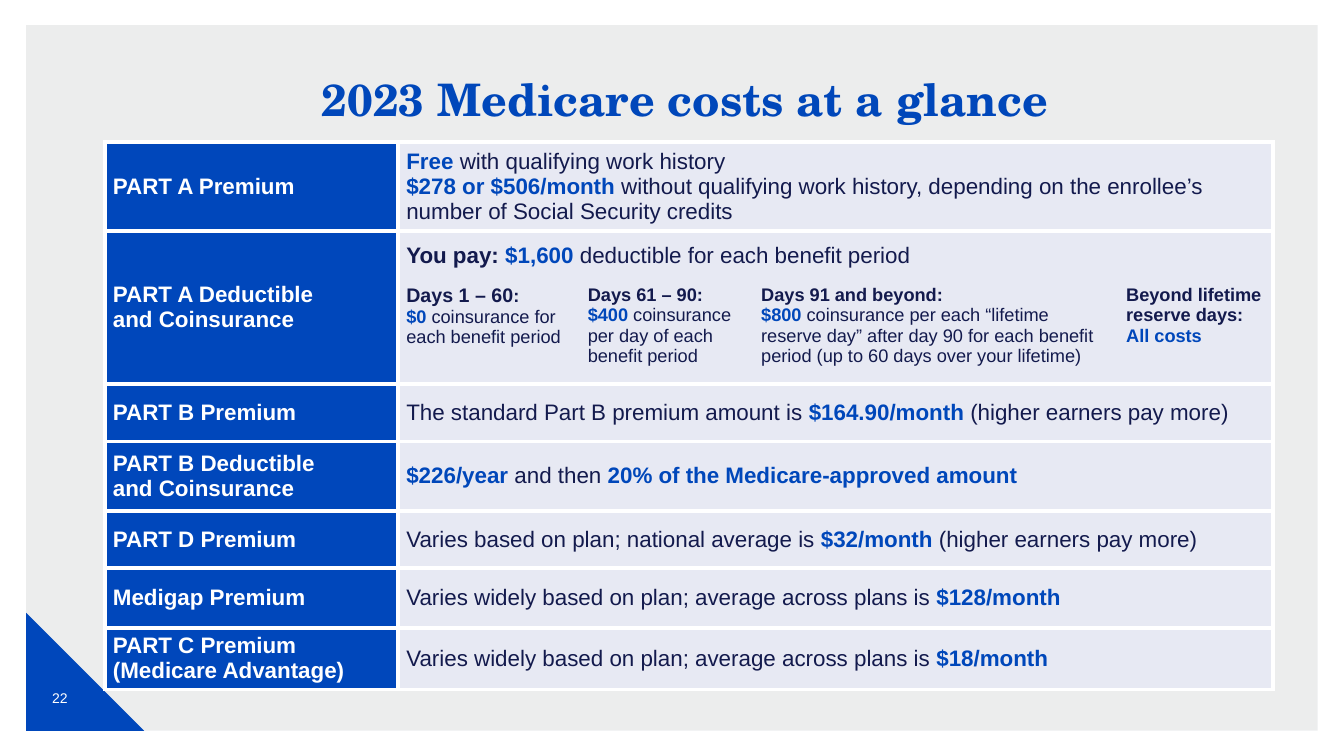
from dataclasses import dataclass

from lxml.etree import SubElement
from pptx import Presentation
from pptx.dml.color import RGBColor as Rgb
from pptx.enum.shapes import MSO_SHAPE as Shape
from pptx.enum.text import MSO_ANCHOR as Anchor, PP_ALIGN as Align
from pptx.oxml.ns import qn
from pptx.util import Inches, Pt


@dataclass(frozen=True)
class Theme:
    panel: str = "D0D3D4"
    blue: str = "0047BB"
    key: str = "0047BA"
    navy: str = "131A4D"
    pale: str = "E7E9F3"
    white: str = "FFFFFF"
    sans: str = "Arial"
    serif: str = "TeX Gyre Schola"
    title: int = 32
    main: int = 16
    lead: int = 14
    note: int = 13
    page: int = 10
    rule: int = 3


THEME = Theme()
TONES = {
    "head": (THEME.white, True),
    "key": (THEME.key, True),
    "bold": (THEME.navy, True),
    "body": (THEME.navy, False),
}
WIDTHS = [2.91, 1.8, 1.72, 3.62, 1.54]
HEIGHTS = [0.69, 0.5, 1.02, 0.57, 0.69, 0.57, 0.59, 0.57]
DAYS = 2

LABELS = {
    0: "PART A Premium",
    1: "PART A Deductible\nand Coinsurance",
    3: "PART B Premium",
    4: "PART B Deductible\nand Coinsurance",
    5: "PART D Premium",
    6: "Medigap Premium",
    7: "PART C Premium (Medicare Advantage)",
}
COSTS = {
    0: [("key", "Free "), ("body", "with qualifying work history\n"),
        ("key", "$278 or $506/month "),
        ("body", "without qualifying work history, depending on the "
                 "enrollee’s number of Social Security credits")],
    1: [("bold", "You pay: "), ("key", "$1,600 "),
        ("body", "deductible for each benefit period")],
    3: [("body", "The standard Part B premium amount is "),
        ("key", "$164.90/month "), ("body", "(higher earners pay more)")],
    4: [("key", "$226/year "), ("body", "and then "),
        ("key", "20% of the Medicare-approved amount")],
    5: [("body", "Varies based on plan; national average is "),
        ("key", "$32/month"), ("body", " (higher earners pay more)")],
    6: [("body", "Varies widely based on plan; average across plans is "),
        ("key", "$128/month")],
    7: [("body", "Varies widely based on plan; average across plans is "),
        ("key", "$18/month")],
}
STAYS = [
    [("bold", "Days 1 – 60", THEME.lead), ("bold", ":\n"), ("key", "$0"),
     ("body", " coinsurance for each benefit period")],
    [("bold", "Days 61 – 90:\n"), ("key", "$400"),
     ("body", " coinsurance\nper day of each benefit period")],
    [("bold", "Days 91 and beyond:\n"), ("key", "$800"),
     ("body", " coinsurance per each “lifetime reserve day” after day 90 "
              "for each benefit period (up to 60 days over your lifetime)")],
    [("bold", "Beyond lifetime reserve days:\n"), ("key", "All costs")],
]


def style(font, size, color, bold=False, name=THEME.sans):
    font.name = name
    font.size = Pt(size)
    font.bold = bold
    font.color.rgb = Rgb.from_string(color)


def write(cell, parts, size):
    para = cell.text_frame.paragraphs[0]
    for tone, text, *own in parts:
        for i, line in enumerate(text.split("\n")):
            if i:
                para.add_line_break()
            if line:
                run = para.add_run()
                run.text = line
                style(run.font, own[0] if own else size, *TONES[tone])


def edge(cell, sides):
    props = cell._tc.get_or_add_tcPr()
    for side in "LRTB":
        line = SubElement(props, qn("a:ln" + side), w=str(Pt(THEME.rule)))
        if side in sides:
            fill = SubElement(line, qn("a:solidFill"))
            SubElement(fill, qn("a:srgbClr"), val=THEME.white)
        else:
            SubElement(line, qn("a:noFill"))


def sides(row, col):
    if col and row == DAYS - 1:
        return "LTR"
    if col and row == DAYS:
        return {1: "LB", len(WIDTHS) - 1: "RB"}.get(col, "B")
    return "LRTB"


def block(slide, kind, box, color):
    shape = slide.shapes.add_shape(kind, *map(Inches, box))
    shape.shadow.inherit = False
    shape.fill.solid()
    shape.fill.fore_color.rgb = Rgb.from_string(color)
    shape.line.fill.background()
    return shape


def label(slide, box, text, pad, size, color, **look):
    frame = slide.shapes.add_textbox(*map(Inches, box)).text_frame
    frame.word_wrap = True
    frame.vertical_anchor = Anchor.MIDDLE
    frame.margin_left = frame.margin_right = Inches(pad)
    frame.text = text
    para = frame.paragraphs[0]
    para.alignment = Align.CENTER
    style(para.runs[0].font, size, color, **look)
    return para


def back(slide, box):
    left, top, wide, high = box
    panel = block(slide, Shape.RECTANGLE, box, THEME.panel)
    tint = panel.fill._xPr.find(".//" + qn("a:srgbClr"))
    SubElement(tint, qn("a:alpha"), val="40000")
    side = 1.17
    corner = (left, top + high - side, side, side)
    block(slide, Shape.RIGHT_TRIANGLE, corner, THEME.blue)
    spot = (left + 0.06, top + high - 0.62, 0.55, 0.58)
    label(slide, spot, "22", 0.1, THEME.page, THEME.white)


def title(slide, box):
    para = label(slide, box, "2023 Medicare costs at a glance", 0,
                 THEME.title, THEME.key, bold=True, name=THEME.serif)
    para.line_spacing = 0.9


def costs(slide, box):
    frame = slide.shapes.add_table(len(HEIGHTS), len(WIDTHS),
                                   *map(Inches, box))
    table = frame.table
    table.first_row = table.horz_banding = False
    for col, wide in zip(table.columns, WIDTHS):
        col.width = Inches(wide)
    for r, high in enumerate(HEIGHTS):
        table.rows[r].height = Inches(high)
        for c in range(len(WIDTHS)):
            cell = table.cell(r, c)
            edge(cell, sides(r, c))
            cell.fill.solid()
            color = THEME.pale if c else THEME.blue
            cell.fill.fore_color.rgb = Rgb.from_string(color)
            cell.margin_left = cell.margin_right = Inches(0.08)
            cell.margin_top = cell.margin_bottom = Inches(0.04)
            if not c or r != DAYS:
                cell.vertical_anchor = Anchor.MIDDLE
    table.cell(DAYS - 1, 0).merge(table.cell(DAYS, 0))
    for r, text in LABELS.items():
        write(table.cell(r, 0), [("head", text)], THEME.main)
    for r, parts in COSTS.items():
        table.cell(r, 1).merge(table.cell(r, len(WIDTHS) - 1))
        write(table.cell(r, 1), parts, THEME.main)
    for c, parts in enumerate(STAYS, 1):
        write(table.cell(DAYS, c), parts, THEME.note)


def main():
    deck = Presentation()
    deck.slide_width = Inches(13.33)
    deck.slide_height = Inches(7.5)
    slide = deck.slides.add_slide(deck.slide_layouts[6])
    back(slide, (0.26, 0.25, 12.81, 7))
    costs(slide, (1.04, 1.41, sum(WIDTHS), sum(HEIGHTS)))
    title(slide, (1.04, 0.7, 11.51, 0.62))
    deck.save("out.pptx")


if __name__ == "__main__":
    main()
